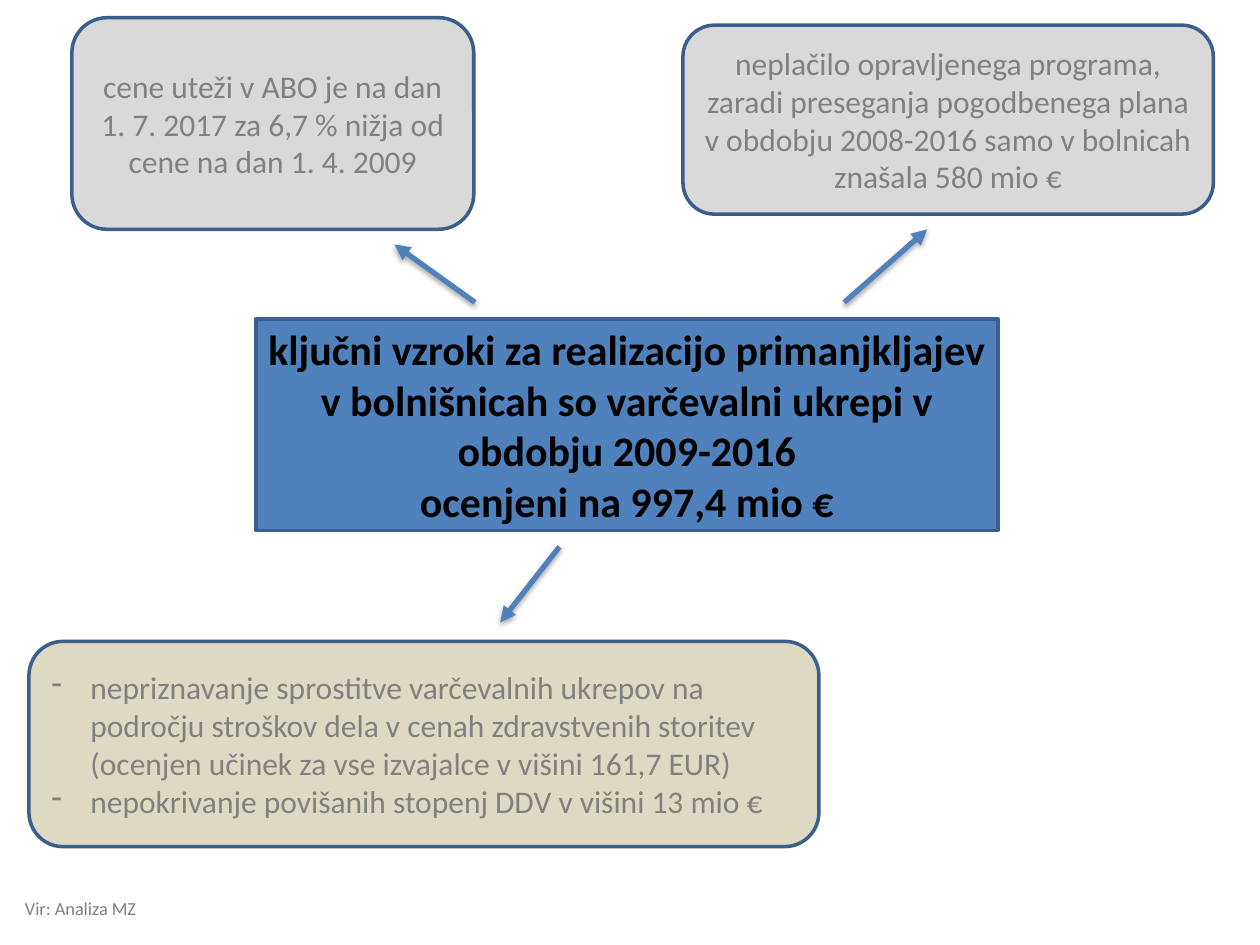
import dataclasses

import lxml.etree
import pptx
import pptx.dml.color
import pptx.enum.shapes
import pptx.enum.text
import pptx.oxml
import pptx.oxml.ns
import pptx.util

PX = 9144  # EMU in one px, 100 px to the inch
FONT = "Calibri"
EDGE, BLUE, GREY = "3A5F8C", "4F81BD", "808080"
SHAPE = pptx.enum.shapes.MSO_SHAPE
ALIGN = pptx.enum.text.PP_ALIGN
qn = pptx.oxml.ns.qn


@dataclasses.dataclass
class Box:
    at: tuple[int, int, int, int]
    fill: str
    lines: list[str]
    form: int = SHAPE.ROUNDED_RECTANGLE
    size: float = 18
    ink: str = GREY
    bold: bool = False
    list: bool = False


@dataclasses.dataclass
class Arrow:
    start: tuple[int, int]
    end: tuple[int, int]


BOXES = [
    Box((23, 509, 627, 163), "DDD9C3", [
        "nepriznavanje sprostitve varčevalnih ukrepov na področju stroškov dela "
        "v cenah zdravstvenih storitev (ocenjen učinek za vse izvajalce "
        "v višini 161,7 EUR)",
        "nepokrivanje povišanih stopenj DDV v višini 13 mio €",
    ], list=True),
    Box((542, 20, 421, 150), "D9D9D9", [
        "neplačilo opravljenega programa, zaradi preseganja pogodbenega plana "
        "v obdobju 2008-2016 samo v bolnicah znašala 580 mio €",
    ]),
    Box((57, 14, 319, 168), "D9D9D9", [
        "cene uteži v ABO je na dan 1. 7. 2017 za 6,7 % nižja od "
        "cene na dan 1. 4. 2009",
    ]),
    Box((203, 253, 589, 168), BLUE, [
        "ključni vzroki za realizacijo primanjkljajev v bolnišnicah "
        "so varčevalni ukrepi v obdobju 2009-2016",
        "ocenjeni na 997,4 mio €",
    ], form=SHAPE.RECTANGLE, size=24, ink="000000", bold=True),
]
ARROWS = [
    Arrow((670, 240), (736, 182)),
    Arrow((377, 240), (313, 194)),
    Arrow((444, 434), (397, 494)),
]


def px(*nums: int) -> list[int]:
    return [num * PX for num in nums]


def hue(code: str) -> pptx.dml.color.RGBColor:
    return pptx.dml.color.RGBColor.from_string(code)


def style(para, size: float, ink: str, bold: bool = False) -> None:
    para.font.name = FONT
    para.font.size = pptx.util.Pt(size)
    para.font.bold = bold
    para.font.color.rgb = hue(ink)


def dash(para) -> None:
    """Give the paragraph a hanging dash bullet."""
    props = para._p.get_or_add_pPr()
    props.set("marL", str(31 * PX))
    props.set("indent", str(-31 * PX))
    lxml.etree.SubElement(props, qn("a:buFontTx"))
    lxml.etree.SubElement(props, qn("a:buChar"), char="-")


def draw_box(slide, box: Box) -> None:
    shape = slide.shapes.add_shape(box.form, *px(*box.at))
    shape.shadow.inherit = False
    shape.fill.solid()
    shape.fill.fore_color.rgb = hue(box.fill)
    shape.line.color.rgb = hue(EDGE)
    shape.line.width = pptx.util.Pt(2)
    frame = shape.text_frame
    frame.word_wrap = True
    frame.vertical_anchor = pptx.enum.text.MSO_ANCHOR.MIDDLE
    for i, line in enumerate(box.lines):
        para = frame.add_paragraph() if i else frame.paragraphs[0]
        para.text = line
        para.alignment = ALIGN.LEFT if box.list else ALIGN.CENTER
        if box.list:
            dash(para)
        style(para, box.size, box.ink, box.bold)


def draw_arrow(slide, arrow: Arrow) -> None:
    kind = pptx.enum.shapes.MSO_CONNECTOR.STRAIGHT
    link = slide.shapes.add_connector(kind, *px(*arrow.start, *arrow.end))
    link.line.color.rgb = hue(BLUE)
    link.line.width = pptx.util.Pt(3)
    lxml.etree.SubElement(link.line._get_or_add_ln(), qn("a:tailEnd"), type="triangle")
    # Soft shadow straight below the line
    glow = lxml.etree.SubElement(link._element.spPr, qn("a:effectLst"))
    cast = lxml.etree.SubElement(
        glow, qn("a:outerShdw"), blurRad=str(pptx.util.Pt(3.1)),
        dist=str(pptx.util.Pt(1.8)), dir="5400000", rotWithShape="0")
    tint = lxml.etree.SubElement(cast, qn("a:srgbClr"), val="000000")
    lxml.etree.SubElement(tint, qn("a:alpha"), val="35000")


def draw_source(slide) -> None:
    frame = slide.shapes.add_textbox(*px(10, 707, 207, 28)).text_frame
    frame.word_wrap = True
    frame.auto_size = pptx.enum.text.MSO_AUTO_SIZE.SHAPE_TO_FIT_TEXT
    para = frame.paragraphs[0]
    para.text = "Vir: Analiza MZ"
    style(para, 10.5, GREY)


def main() -> None:
    deck = pptx.Presentation()
    deck.slide_width, deck.slide_height = px(1000, 750)
    slide = deck.slides.add_slide(deck.slide_layouts[6])
    # Causes around the central statement
    for box in BOXES:
        draw_box(slide, box)
    # Arrows from the statement to its causes
    for arrow in ARROWS:
        draw_arrow(slide, arrow)
    # Source line
    draw_source(slide)
    deck.save("out.pptx")


if __name__ == "__main__":
    main()
